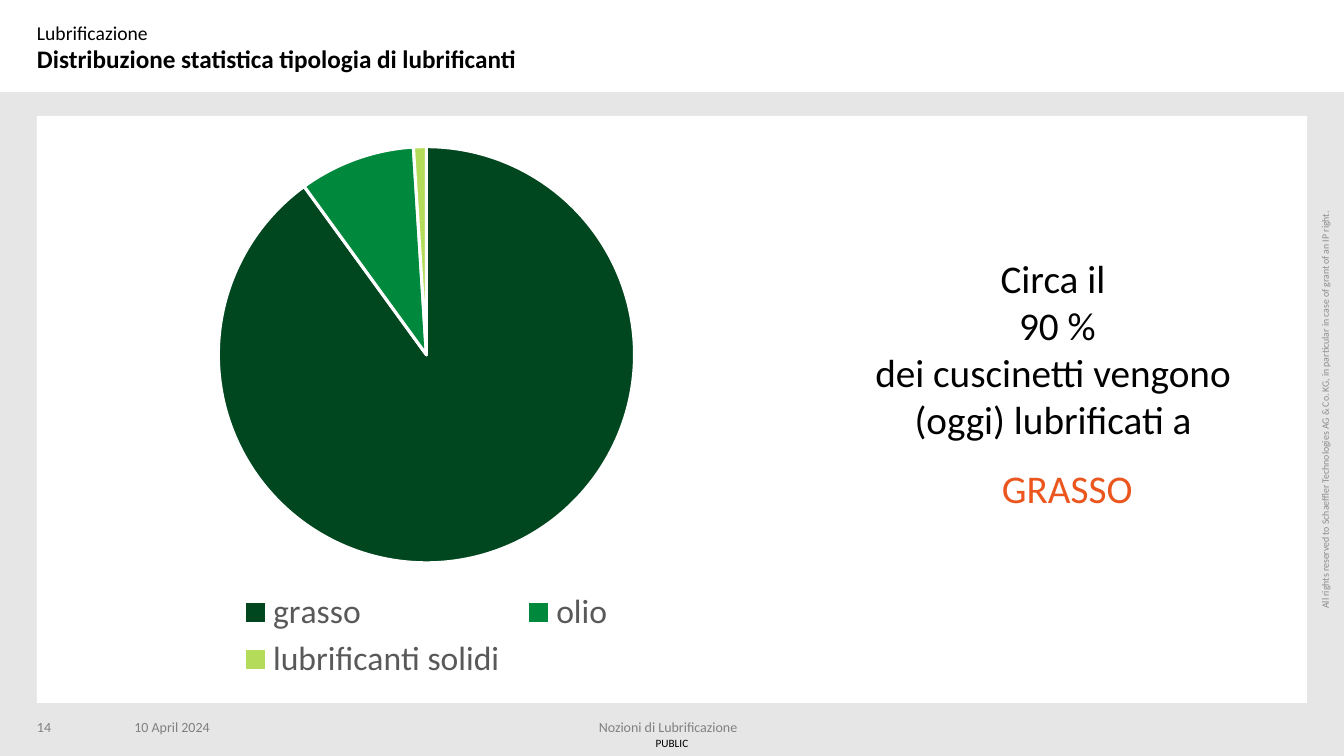
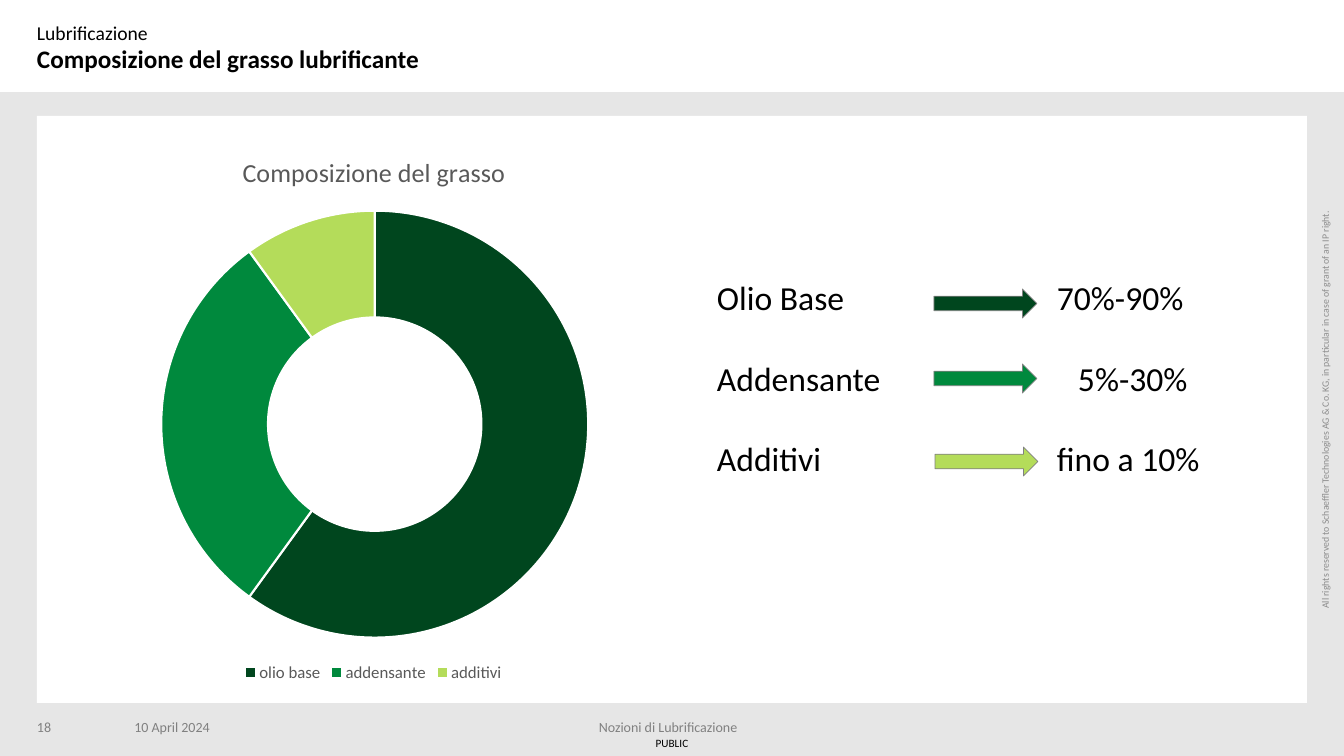
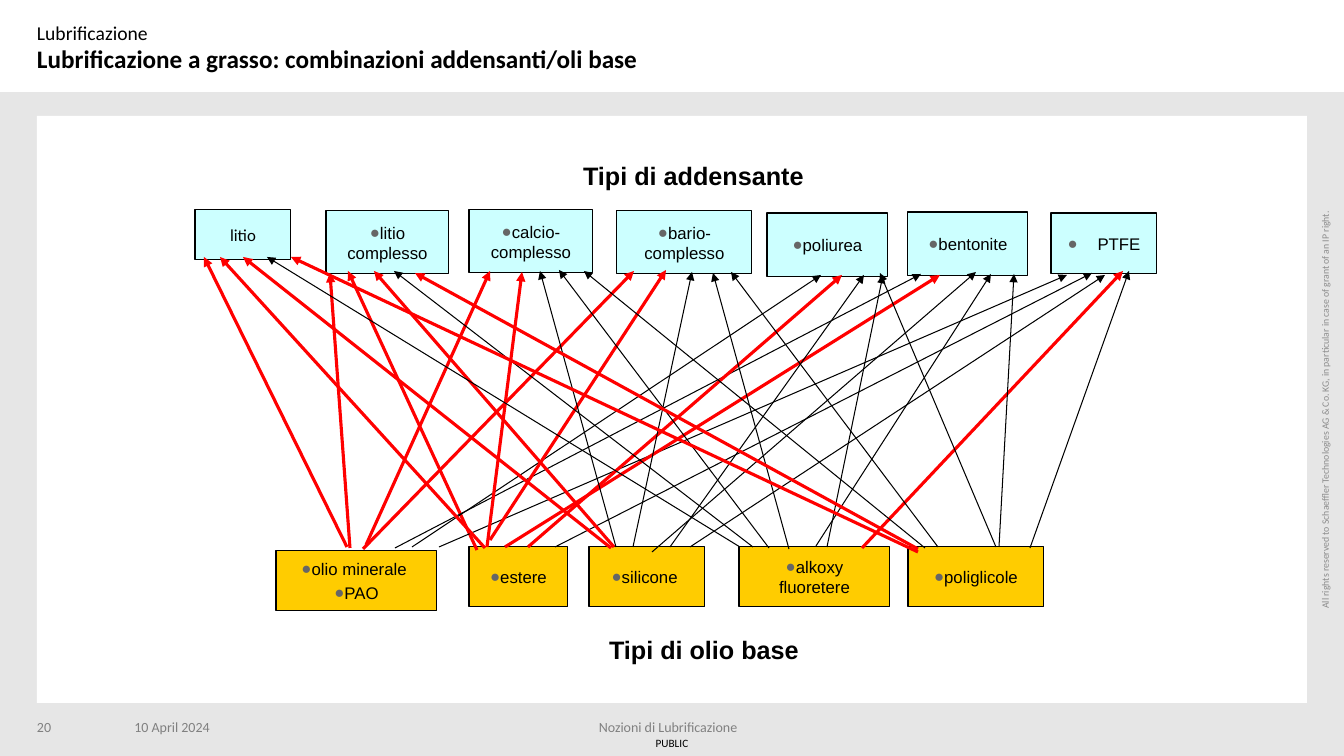
from lxml import etree
from pptx import Presentation
from pptx import util as u
from pptx.chart.data import CategoryChartData
from pptx.dml.color import RGBColor
from pptx.enum import chart as ch, shapes, text
from pptx.oxml import parse_xml
from pptx.oxml.ns import nsdecls, qn

PX = 914400 / 100.8
W, H = 1344, 756

C = {
    "back": "E6E6E6", "white": "FFFFFF", "black": "000000", "footer": "808080",
    "rights": "8C8C8C", "legend": "595959", "bullet": "666666",
    "dark": "00461E", "green": "00893D", "lime": "B4DC5A", "orange": "EB551E",
    "thickener": "CCFFFF", "oil": "FFCC00", "red": "FF0000",
}
GREENS = ("dark", "green", "lime")
LEFT, CENTER = text.PP_ALIGN.LEFT, text.PP_ALIGN.CENTER
TOP, MIDDLE, BOTTOM = (text.MSO_ANCHOR.TOP, text.MSO_ANCHOR.MIDDLE,
                       text.MSO_ANCHOR.BOTTOM)

TOPIC = "Lubrificazione"
RIGHTS = ("All rights reserved to Schaeffler Technologies AG & Co. KG, "
          "in particular in case of grant of an IP right.")
DATE, COURSE, STATUS = "10 April 2024", "Nozioni di Lubrificazione", "PUBLIC"

USAGE = {
    "kind": ch.XL_CHART_TYPE.PIE, "box": (52, 132, 746, 555),
    "data": {"grasso": 90, "olio": 9, "lubrificanti solidi": 1},
    "plot": (218, 146, 416, 418), "border": 2.25,
    "legend_size": 24, "legend": (227, 586, 398, 100),
}
USAGE_TEXT = ["Circa il ", "90 %", "dei cuscinetti vengono \v(oggi) lubrificati a ", "GRASSO"]

COMPOSITION = {
    "kind": ch.XL_CHART_TYPE.DOUGHNUT, "box": (52, 132, 643, 555),
    "data": {"olio base": 60, "addensante": 30, "additivi": 10},
    "plot": (161, 210, 427, 428), "border": 1.5, "legend_size": 12,
    "title": "Composizione del grasso", "title_at": (238, 149),
}
# component, share, tab position, arrow position
SHARES = [
    ("Olio Base", "70%-90%", 340, (934, 289)),
    ("Addensante", "5%-30%", 361, (934, 364)),
    ("Additivi", "fino a 10%", 340, (935, 447)),
]

THICKENERS = [
    ("litio", 195, 210, 96, 50),
    ("litio complesso", 326, 211, 123, 63),
    ("calcio-complesso", 469, 210, 124, 63),
    ("bario-complesso", 617, 211, 135, 63),
    ("poliurea", 767, 213, 121, 64),
    ("bentonite", 908, 212, 120, 64),
    ("PTFE", 1051, 213, 106, 61),
]
OILS = [
    ("olio minerale \nPAO", 276, 551, 161, 60),
    ("estere", 469, 547, 99, 60),
    ("silicone ", 589, 547, 116, 60),
    ("alkoxy\vfluoretere", 739, 547, 151, 60),
    ("poliglicole", 908, 547, 136, 60),
]
HEADINGS = [("Tipi di addensante", 575, 156, 238), ("Tipi di olio base", 601, 630, 208)]

# width and colour of the arrows, then start and end of each
ARROW_STYLES = {"common": ("red", 2.25), "possible": ("black", 0.75)}
ARROWS = [
    ("common", 347, 547, 204, 257), ("common", 350, 548, 330, 273),
    ("common", 477, 550, 348, 271), ("common", 366, 545, 490, 271),
    ("common", 363, 549, 634, 271), ("possible", 412, 547, 821, 275),
    ("possible", 395, 548, 921, 274), ("possible", 439, 547, 1067, 275),
    ("common", 485, 548, 220, 257), ("common", 487, 547, 522, 272),
    ("common", 490, 540, 666, 270), ("common", 528, 547, 842, 275),
    ("common", 505, 547, 940, 275), ("possible", 555, 547, 1092, 273),
    ("common", 611, 548, 243, 257), ("common", 614, 547, 374, 271),
    ("possible", 616, 547, 540, 271), ("possible", 633, 547, 692, 272),
    ("possible", 670, 547, 864, 275), ("possible", 652, 552, 976, 272),
    ("possible", 690, 547, 1105, 275), ("possible", 740, 547, 267, 257),
    ("possible", 753, 547, 394, 271), ("possible", 769, 548, 559, 270),
    ("possible", 789, 549, 713, 273), ("possible", 827, 547, 883, 275),
    ("possible", 816, 546, 991, 274), ("common", 862, 548, 1123, 271),
    ("common", 918, 552, 291, 257), ("common", 918, 549, 415, 273),
    ("possible", 925, 548, 584, 271), ("possible", 938, 547, 731, 272),
    ("possible", 996, 547, 880, 273), ("possible", 999, 547, 1014, 274),
    ("possible", 1030, 548, 1129, 271),
]


def emu(*lengths):
    return [round(n * PX) for n in lengths]


def rgb(name):
    return RGBColor.from_string(C[name])


def style_font(font, size, color="black", name="Calibri", bold=False):
    font.name, font.size, font.bold = name, u.Pt(size), bold
    font.color.rgb = rgb(color)


def fill_text(sp, content, size, color="black", name="Calibri", bold=False,
              align=LEFT, anchor=TOP, inset=(0, 0), wrap=True):
    tf = sp.text_frame
    tf.text = content
    tf.word_wrap, tf.vertical_anchor = wrap, anchor
    tf.margin_left, tf.margin_top = tf.margin_right, tf.margin_bottom = emu(*inset)
    for p in tf.paragraphs:
        p.alignment = align
        for r in p.runs:
            style_font(r.font, size, color, name, bold)
    return tf


def add_text(s, box, content, size, **look):
    return fill_text(s.shapes.add_textbox(*emu(*box)), content, size, **look)


def add_shape(s, box, fill, line=None, weight=0.75, kind=shapes.MSO_SHAPE.RECTANGLE):
    sp = s.shapes.add_shape(kind, *emu(*box))
    sp.shadow.inherit = False
    sp.fill.solid()
    sp.fill.fore_color.rgb = rgb(fill)
    if line:
        sp.line.color.rgb = rgb(line)
        sp.line.width = u.Pt(weight)
    else:
        sp.line.fill.background()
    return sp


def add_frame(prs, number, title):
    """Adds a slide with the background, bands, title and footer all slides share."""
    s = prs.slides.add_slide(prs.slide_layouts[6])
    s.background.fill.solid()
    s.background.fill.fore_color.rgb = rgb("back")
    add_shape(s, (0, 0, W, 92), "white")
    add_shape(s, (37, 116, 1270, 587), "white")
    rights = s.shapes.add_textbox(*emu(1047, 392, 556, 36))
    rights.rotation = 270
    fill_text(rights, RIGHTS, 7, color="rights", align=CENTER, anchor=MIDDLE, inset=(0, 5))
    add_text(s, (643, 737, 58, 13), STATUS, 8, align=CENTER, anchor=MIDDLE)
    for box, content, size, bold in [((37, 46, 1032, 28), title, 18, True),
                                     ((37, 21, 803, 24), TOPIC, 14, False)]:
        tf = add_text(s, box, content, size, bold=bold, anchor=BOTTOM)
        tf.paragraphs[0].line_spacing = 0.9
    for x, w, content, align in [(37, 39, str(number), LEFT), (85, 174, DATE, CENTER),
                                 (267, 802, COURSE, CENTER)]:
        add_text(s, (x, 719, w, 20), content, 10, color="footer", align=align)
    return s


def place(part, index, box, frame, target=""):
    """Fixes a chart part at a px box (or point) inside the chart frame."""
    for old in part.findall(qn("c:layout")):
        part.remove(old)
    layout = etree.Element(qn("c:layout"))
    manual = etree.SubElement(layout, qn("c:manualLayout"))
    x, y, w, h = frame
    values = [(box[0] - x) / w, (box[1] - y) / h]
    values += [n / side for n, side in zip(box[2:], (w, h))]
    tags = [("layoutTarget", target)] if target else []
    tags += [("xMode", "edge"), ("yMode", "edge")]
    tags += [(axis, f"{value:.3f}") for axis, value in zip("xywh", values)]
    for tag, value in tags:
        etree.SubElement(manual, qn("c:" + tag)).set("val", value)
    part.insert(index, layout)


def add_round_chart(s, content):
    data = CategoryChartData()
    data.categories = list(content["data"])
    data.add_series("Series 1", content["data"].values())
    box = content["box"]
    chart = s.shapes.add_chart(content["kind"], *emu(*box), data).chart
    style_font(chart.font, 10)
    chart.has_title = "title" in content
    if chart.has_title:
        tf = chart.chart_title.text_frame
        tf.text = content["title"]
        style_font(tf.paragraphs[0].runs[0].font, 18.6, "legend")
        place(chart.element.xpath(".//c:title")[0], 1, content["title_at"], box)
    chart.has_legend = True
    chart.legend.position = ch.XL_LEGEND_POSITION.BOTTOM
    chart.legend.include_in_layout = False
    style_font(chart.legend.font, content["legend_size"], "legend")
    if "legend" in content:
        place(chart.element.xpath(".//c:legend")[0], 1, content["legend"], box)
    place(chart.element.xpath(".//c:plotArea")[0], 0, content["plot"], box, "inner")
    for hole in chart.element.xpath(".//c:holeSize"):
        hole.set("val", "75")
    plot = chart.plots[0]
    plot.vary_by_categories = True
    for i, color in enumerate(GREENS):
        fmt = plot.series[0].points[i].format
        fmt.fill.solid()
        fmt.fill.fore_color.rgb = rgb(color)
        fmt.line.color.rgb = rgb("white")
        fmt.line.width = u.Pt(content["border"])


def add_bullet(p, indent):
    pPr = p._p.get_or_add_pPr()
    pPr.set("marL", str(indent))
    pPr.set("indent", str(-indent))
    for xml in (f'<a:buClr {nsdecls("a")}><a:srgbClr val="{C["bullet"]}"/></a:buClr>',
                f'<a:buFont {nsdecls("a")} typeface="Arial"/>',
                f'<a:buChar {nsdecls("a")} char="●"/>'):
        pPr.append(parse_xml(xml))


def add_material(s, material, fill):
    name, *box = material
    sp = add_shape(s, box, fill, "black")
    plain = name == "litio"
    tf = fill_text(sp, name, 12, name="Calibri" if plain else "Arial",
                   align=CENTER, anchor=MIDDLE, inset=(8, 4) if plain else (10, 5))
    indent, = emu(30 if name == "PTFE" else 0)
    for i, p in enumerate(tf.paragraphs):
        if not plain:
            add_bullet(p, indent)
        if i:
            p.space_before = u.Pt(2.4)


def add_arrow(s, kind, *ends):
    color, weight = ARROW_STYLES[kind]
    line = s.shapes.add_connector(shapes.MSO_CONNECTOR.STRAIGHT, *emu(*ends))
    line.line.color.rgb = rgb(color)
    line.line.width = u.Pt(weight)
    etree.SubElement(line.line._get_or_add_ln(), qn("a:tailEnd")).set("type", "triangle")
    etree.SubElement(line._element.spPr, qn("a:effectLst"))


def build_usage(prs):
    s = add_frame(prs, 14, "Distribuzione statistica tipologia di lubrificanti")
    add_round_chart(s, USAGE)
    tf = add_text(s, (863, 254, 389, 265), "\n".join(USAGE_TEXT), 28, align=CENTER)
    grease = tf.paragraphs[-1]
    grease.alignment = LEFT
    grease.space_before = u.Pt(15.5)
    grease._p.pPr.set("marL", str(emu(139)[0]))
    grease.runs[0].font.color.rgb = rgb("orange")


def build_composition(prs):
    s = add_frame(prs, 18, "Composizione del grasso lubrificante")
    add_round_chart(s, COMPOSITION)
    rows = "\n".join(f"{name}\t{share}" for name, share, *_ in SHARES)
    tf = add_text(s, (717, 277, 495, 204), rows, 24)
    for i, (p, (_, _, tab, at), color) in enumerate(zip(tf.paragraphs, SHARES, GREENS)):
        if i:
            p.space_before = u.Pt(28.8)
        tabs = etree.SubElement(p._p.get_or_add_pPr(), qn("a:tabLst"))
        stop = etree.SubElement(tabs, qn("a:tab"))
        stop.set("pos", str(emu(tab)[0]))
        stop.set("algn", "l")
        add_shape(s, (*at, 103, 29), color, "footer", 0.5, shapes.MSO_SHAPE.RIGHT_ARROW)


def build_combinations(prs):
    s = add_frame(prs, 20, "Lubrificazione a grasso: combinazioni addensanti/oli base")
    for materials, fill in ((THICKENERS, "thickener"), (OILS, "oil")):
        for material in materials:
            add_material(s, material, fill)
    for arrow in ARROWS:
        add_arrow(s, *arrow)
    for heading, x, y, w in HEADINGS:
        add_text(s, (x, y, w, 38), heading, 18, name="Arial", bold=True,
                 inset=(8, 4), wrap=False)


def main():
    prs = Presentation()
    prs.slide_width, prs.slide_height = emu(W, H)
    build_usage(prs)
    build_composition(prs)
    build_combinations(prs)
    prs.save("out.pptx")


if __name__ == "__main__":
    main()
